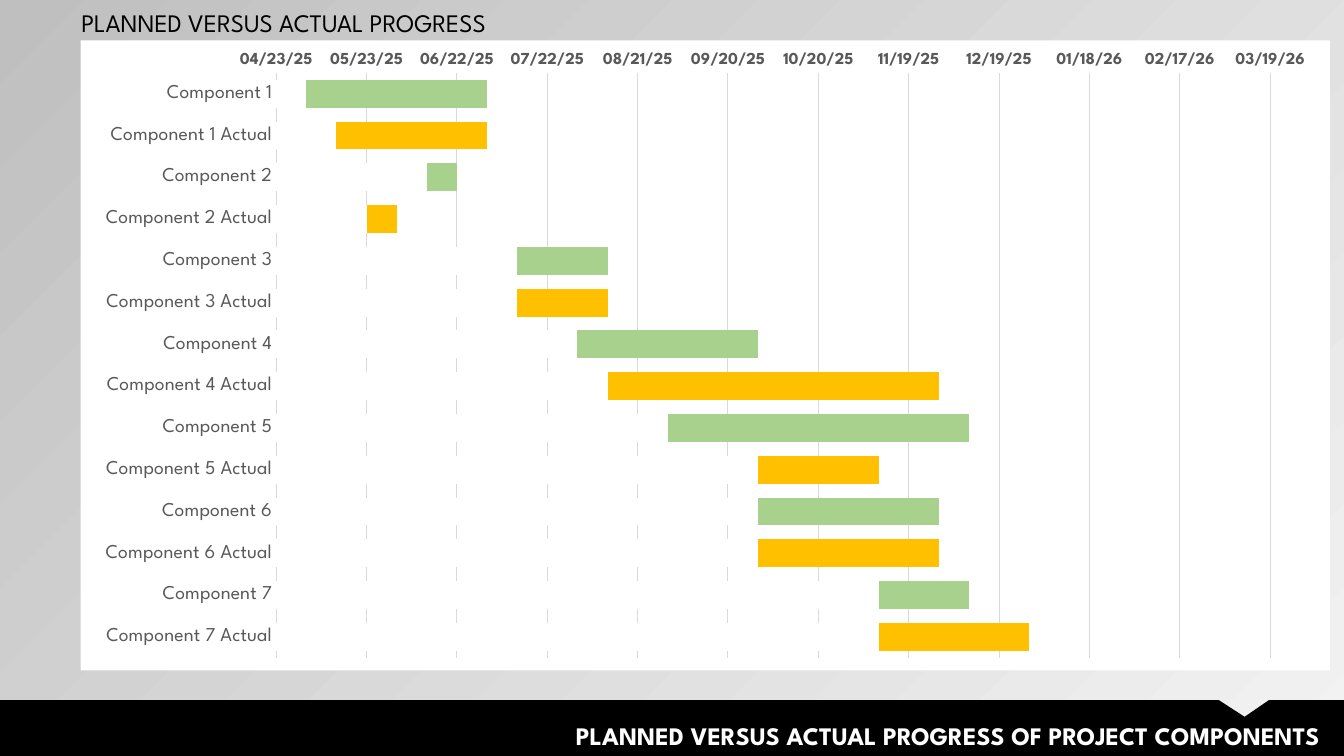
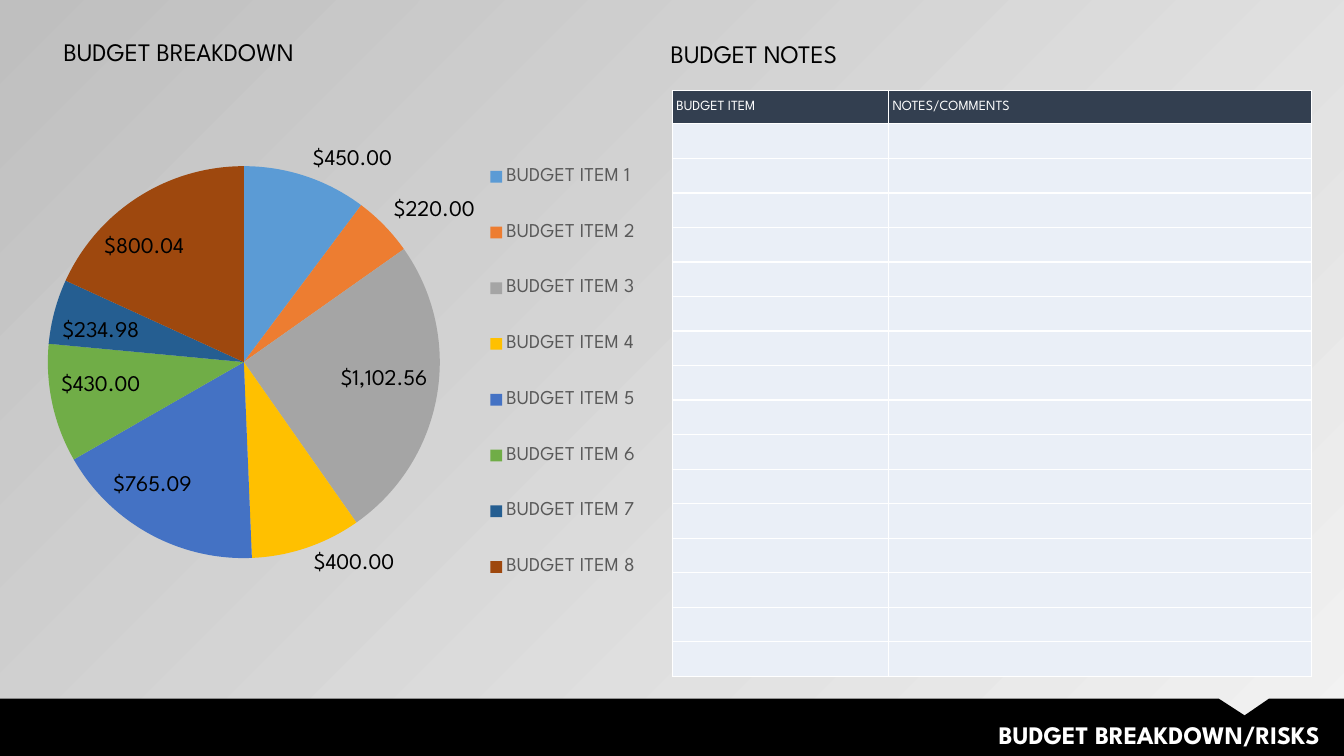
from lxml.etree import SubElement
from pptx import Presentation
from pptx.chart.data import CategoryChartData
from pptx.dml.color import RGBColor
from pptx.enum.chart import (XL_CHART_TYPE, XL_LABEL_POSITION,
                             XL_LEGEND_POSITION, XL_TICK_MARK)
from pptx.enum.text import MSO_ANCHOR, MSO_AUTO_SIZE, PP_ALIGN
from pptx.oxml import parse_xml
from pptx.oxml.ns import nsdecls, qn
from pptx.util import Pt

WIDE, HIGH = 960, 540
FONT = "League Spartan"
BLACK = RGBColor(0x00, 0x00, 0x00)
WHITE = RGBColor(0xFF, 0xFF, 0xFF)
PALE = RGBColor(0xF2, 0xF2, 0xF2)
SILVER = RGBColor(0xBF, 0xBF, 0xBF)
RULE = RGBColor(0xD9, 0xD9, 0xD9)
GREY = RGBColor(0x59, 0x59, 0x59)
NAVY = RGBColor(0x33, 0x3F, 0x50)
ICE = RGBColor(0xEA, 0xEF, 0xF7)
GREEN = RGBColor(0xA9, 0xD1, 0x8E)
GOLD = RGBColor(0xFF, 0xC0, 0x00)
SLICES = [RGBColor(0x5B, 0x9B, 0xD5), RGBColor(0xED, 0x7D, 0x31),
          RGBColor(0xA5, 0xA5, 0xA5), GOLD,
          RGBColor(0x44, 0x72, 0xC4), RGBColor(0x70, 0xAD, 0x47),
          RGBColor(0x25, 0x5E, 0x91), RGBColor(0x9E, 0x48, 0x0E)]

# First and last day of each component, planned then actual, as date serials
SPANS = [((45780, 45840), (45790, 45840)),
         ((45820, 45830), (45800, 45810)),
         ((45850, 45880), (45850, 45880)),
         ((45870, 45930), (45880, 45990)),
         ((45900, 46000), (45930, 45970)),
         ((45930, 45990), (45930, 45990)),
         ((45970, 46000), (45970, 46020))]
COSTS = [450, 220, 1102.56, 400, 765.09, 430, 234.98, 800.04]
MONEY = r'_("$"* #,##0.00_);_("$"* \(#,##0.00\);_("$"* "-"??_);_(@_)'


def points(box):
    return [Pt(side) for side in box]


def style(font, size, color, bold=False):
    font.name, font.size, font.bold = FONT, Pt(size), bold
    font.color.rgb = color


def write(frame, text, size=18, color=BLACK, bold=False, align=PP_ALIGN.LEFT):
    para = frame.paragraphs[0]
    para.alignment = align
    run = para.add_run()
    run.text = text
    style(run.font, size, color, bold)


def label(slide, box, text, **form):
    frame = slide.shapes.add_textbox(*points(box)).text_frame
    frame.word_wrap = True
    frame.auto_size = MSO_AUTO_SIZE.SHAPE_TO_FIT_TEXT
    write(frame, text, **form)


def shade(slide):
    """Fill the background with a diagonal grey gradient."""
    fill = slide.background.fill
    fill.gradient()
    fill.gradient_angle = 135
    for stop, place, color in zip(fill.gradient_stops, (0, 1), (PALE, SILVER)):
        stop.position = place
        stop.color.rgb = color
    first = next(slide.element.iter(qn("a:srgbClr")))
    SubElement(first, qn("a:alpha")).set("val", "40000")


def band(slide, box, title):
    """Draw the notched black footer band with its title."""
    left, top, width, height = box
    right, base = left + width, top + height
    path = slide.shapes.build_freeform(Pt(left), Pt(top), scale=1.0)
    spots = [(right - 89.5, top), (right - 71, top + 12), (right - 53.5, top),
             (right, top), (right, base), (left, base)]
    path.add_line_segments([(Pt(x), Pt(y)) for x, y in spots], close=True)
    shape = path.convert_to_shape()
    shape.shadow.inherit = False
    shape.fill.solid()
    shape.fill.fore_color.rgb = BLACK
    shape.line.fill.background()
    label(slide, (right - 767, top + 11, 757, 29), title,
          color=WHITE, bold=True, align=PP_ALIGN.RIGHT)


def page(deck, title, top):
    slide = deck.slides.add_slide(deck.slide_layouts[6])
    shade(slide)
    band(slide, (0, top, WIDE, HIGH - top), title)
    return slide


def graph(slide, box, kind, names, lists, size, back):
    """Add a chart with plain text and a borderless area."""
    data = CategoryChartData()
    data.categories = names
    for rank, values in enumerate(lists, 1):
        data.add_series(f"Series {rank}", values)
    chart = slide.shapes.add_chart(kind, *points(box), data).chart
    chart.has_title = False
    chart.has_legend = False
    style(chart.font, size, BLACK)
    chart.element.find(qn("c:txPr")).addprevious(parse_xml(
        f'<c:spPr {nsdecls("c", "a")}>{back}<a:ln><a:noFill/></a:ln></c:spPr>'))
    return chart


def gantt(slide, box):
    names = [f"Component {n}{end}" for n in range(1, len(SPANS) + 1)
             for end in ("", " Actual")]
    starts, ends = zip(*(span for pair in SPANS for span in pair))
    back = f'<a:solidFill><a:srgbClr val="{WHITE}"/></a:solidFill>'
    chart = graph(slide, box, XL_CHART_TYPE.BAR_CLUSTERED, names,
                  (ends, starts), 14, back)
    plot = chart.plots[0]
    plot.vary_by_categories = False
    plot.gap_width, plot.overlap = 50, 100
    for series, color in zip(plot.series, (GOLD, WHITE)):
        series.invert_if_negative = False
        series.format.fill.solid()
        series.format.fill.fore_color.rgb = color
    for row in range(0, len(names), 2):
        fill = plot.series[0].points[row].format.fill
        fill.solid()
        fill.fore_color.rgb = GREEN

    rows, days = chart.category_axis, chart.value_axis
    for axis in (rows, days):
        axis.major_tick_mark = axis.minor_tick_mark = XL_TICK_MARK.NONE
    rows.reverse_order = True
    style(rows.tick_labels.font, 14, GREY)
    style(days.tick_labels.font, 12, GREY, bold=True)
    days.minimum_scale, days.maximum_scale, days.major_unit = 45770, 46100, 30
    days.tick_labels.number_format = "mm/dd/yy;@"
    days.tick_labels.number_format_is_linked = False
    days.format.line.fill.background()
    for line in (rows.format.line, days.major_gridlines.format.line):
        line.color.rgb = RULE
        line.width = Pt(0.75)


def fix(part, index, box, inner=False):
    """Pin a chart part to a box given in fractions of the chart."""
    for old in part.findall(qn("c:layout")):
        part.remove(old)
    layout = parse_xml(f'<c:layout {nsdecls("c")}><c:manualLayout/></c:layout>')
    sides = [("xMode", "edge"), ("yMode", "edge"), *zip("xywh", box)]
    if inner:
        sides.insert(0, ("layoutTarget", "inner"))
    for tag, value in sides:
        SubElement(layout[0], qn(f"c:{tag}")).set("val", str(value))
    part.insert(index, layout)


def pie(slide, box):
    names = [f"BUDGET ITEM {n}" for n in range(1, len(COSTS) + 1)]
    chart = graph(slide, box, XL_CHART_TYPE.PIE, names, [COSTS], 10,
                  "<a:noFill/>")
    plot = chart.plots[0]
    plot.vary_by_categories = True
    for index, color in enumerate(SLICES):
        fill = plot.series[0].points[index].format.fill
        fill.solid()
        fill.fore_color.rgb = color
    tags = plot.series[0].data_labels
    tags.show_value = True
    tags.show_percentage = False
    tags.number_format = MONEY
    tags.number_format_is_linked = False
    tags.position = XL_LABEL_POSITION.BEST_FIT
    style(tags.font, 16, BLACK)

    chart.has_legend = True
    chart.legend.position = XL_LEGEND_POSITION.RIGHT
    chart.legend.include_in_layout = False
    style(chart.legend.font, 14, GREY)
    root = chart.element.find(qn("c:chart"))
    fix(root.find(qn("c:plotArea")), 0, (0.18, 0.06, 0.51, 0.94), inner=True)
    fix(root.find(qn("c:legend")), 1, (0.75, 0.17, 0.2, 0.75))


def paint(cell, color):
    """Give a cell its fill, white borders and tight margins."""
    cell.fill.solid()
    cell.fill.fore_color.rgb = color
    cell.vertical_anchor = MSO_ANCHOR.MIDDLE
    cell.margin_left = Pt(3)
    cell.margin_right = cell.margin_top = cell.margin_bottom = 0
    props = cell._tc.get_or_add_tcPr()
    for index, side in enumerate("LRTB"):
        props.insert(index, parse_xml(
            f'<a:ln{side} {nsdecls("a")} w="12700"><a:solidFill>'
            f'<a:srgbClr val="{WHITE}"/></a:solidFill></a:ln{side}>'))


def notes(slide, box, heads, count):
    """Add a table with a header row and empty rows below it."""
    left, top, width, height = box
    table = slide.shapes.add_table(count + 1, len(heads), *points(box)).table
    table.columns[0].width = Pt(154.4)
    table.columns[1].width = Pt(width - 154.4)
    for index, row in enumerate(table.rows):
        row.height = Pt((height - 24) / count if index else 24)
        for cell, head in zip(row.cells, heads):
            paint(cell, ICE if index else NAVY)
            if index:
                para = cell.text_frame.paragraphs[0]._p
                SubElement(para, qn("a:endParaRPr")).set("sz", "1000")
            else:
                write(cell.text_frame, head, size=10, color=WHITE)


def main():
    deck = Presentation()
    deck.slide_width, deck.slide_height = Pt(WIDE), Pt(HIGH)

    slide = page(deck, "PLANNED VERSUS ACTUAL PROGRESS OF PROJECT COMPONENTS", 500)
    gantt(slide, (57.6, 28.9, 892.4, 450))
    label(slide, (51, 2, 348, 29), "PLANNED VERSUS ACTUAL PROGRESS")

    slide = page(deck, "BUDGET BREAKDOWN/RISKS", 499)
    pie(slide, (-64.6, 14.4, 549, 461))
    label(slide, (38.3, 22.5, 320, 29), "BUDGET BREAKDOWN")
    notes(slide, (480.2, 64.5, 456.5, 419), ("BUDGET ITEM", "NOTES/COMMENTS"), 16)
    label(slide, (472, 24, 320, 29), "BUDGET NOTES")

    deck.save("out.pptx")


if __name__ == "__main__":
    main()
